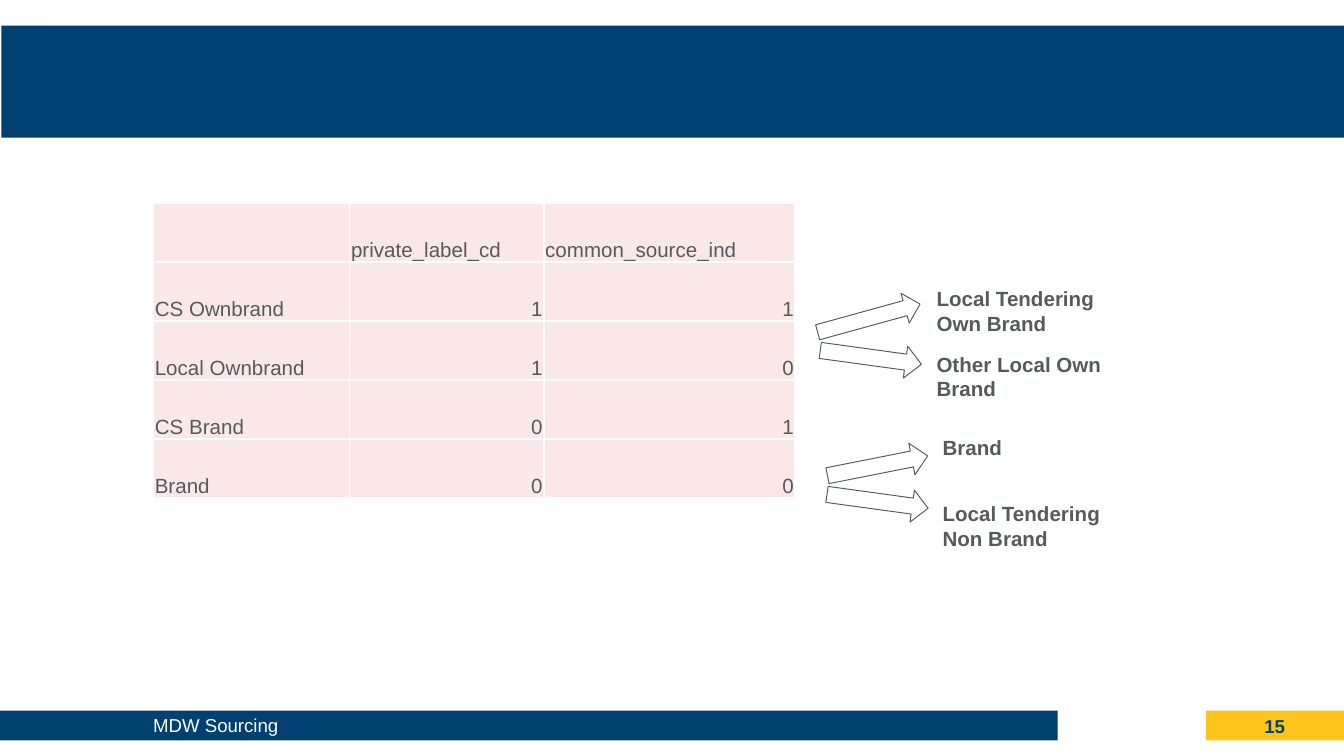
from pptx import Presentation
from pptx.dml.color import RGBColor as RGB
from pptx.enum.shapes import MSO_SHAPE as Shape
from pptx.enum.text import MSO_ANCHOR as Anchor, MSO_AUTO_SIZE as Fit, PP_ALIGN as Align
from pptx.oxml import parse_xml
from pptx.oxml.ns import nsdecls
from pptx.util import Inches, Pt

theme = dict(
    font="Arial", navy="004171", gold="FCC51D", white="FFFFFF",
    grey="565A5B", pink="FAE7E8", small=10, body=11,
)

deck = Presentation()
deck.slide_width = Inches(10)
deck.slide_height = deck.slide_width * 9 // 16
slide = deck.slides.add_slide(deck.slide_layouts[6])
shapes = slide.shapes


def place(left, top, width, height):
    """Turn percent shares of the slide into a box."""
    wide, high = deck.slide_width / 100, deck.slide_height / 100
    return [round(n) for n in (left * wide, top * high, width * wide, height * high)]


def write(frame, text, size, color, bold=False, align=Align.LEFT):
    para = frame.paragraphs[0]
    para.alignment = align
    run = para.add_run()
    run.text = text
    run.font.name, run.font.size = theme["font"], Pt(theme[size])
    run.font.bold = bold
    run.font.color.rgb = RGB.from_string(theme[color])


# Title band and footer bars
for box, color in [
    ((0.1, 3.4, 100, 14.8), "navy"),
    ((0, 94, 78.7, 3.95), "navy"),
    ((89.75, 94, 10.3, 3.95), "gold"),
]:
    bar = shapes.add_shape(Shape.RECTANGLE, *place(*box))
    bar.shadow.inherit = False
    bar.fill.solid()
    bar.fill.fore_color.rgb = RGB.from_string(theme[color])
    bar.line.fill.background()

# Footer text and page number
for box, text, color, page in [
    ((11.4, 94.4, 19.9, 3.02), "MDW Sourcing", "white", False),
    ((94, 94.5, 1.7, 3.02), "15", "navy", True),
]:
    frame = shapes.add_textbox(*place(*box)).text_frame
    frame.margin_left = frame.margin_right = frame.margin_top = frame.margin_bottom = 0
    frame.word_wrap = not page
    frame.auto_size = Fit.SHAPE_TO_FIT_TEXT
    frame.vertical_anchor = Anchor.MIDDLE if page else Anchor.TOP
    write(frame, text, "small", color, page, Align.CENTER if page else Align.LEFT)

# Sourcing flags
rows = [
    ("", "private_label_cd", "common_source_ind"),
    ("CS Ownbrand", "1", "1"),
    ("Local Ownbrand", "1", "0"),
    ("CS Brand", "0", "1"),
    ("Brand", "0", "0"),
]
table = shapes.add_table(5, 3, *place(11.42, 26.9, 47.75, 39)).table
table.first_row = table.horz_banding = False
for col, share in zip(table.columns, (14.6, 14.45, 18.7)):
    col.width = place(0, 0, share, 0)[2]
for r, row in enumerate(rows):
    for c, text in enumerate(row):
        cell = table.cell(r, c)
        cell.margin_left = cell.margin_right = cell.margin_top = Inches(0.01)
        cell.margin_bottom = 0
        cell.vertical_anchor = Anchor.BOTTOM
        for side in ("lnL", "lnR", "lnT", "lnB"):
            cell._tc.get_or_add_tcPr().append(parse_xml(
                f'<a:{side} {nsdecls("a")} w="{Pt(1)}"><a:solidFill>'
                f'<a:srgbClr val="{theme["white"]}"/></a:solidFill></a:{side}>'))
        cell.fill.solid()
        cell.fill.fore_color.rgb = RGB.from_string(theme["pink"])
        if text:
            align = Align.RIGHT if r and c else Align.LEFT
            write(cell.text_frame, text, "body", "grey", align=align)

# Arrows that split the local rows
for box, turn in [
    ((60.7, 40.05, 7.9, 4.1), -15.4),
    ((61, 45.15, 7.6, 4.25), 7.8),
    ((61.5, 64.2, 7.6, 4.25), 7.8),
    ((61.5, 59.5, 7.6, 4.25), -11.2),
]:
    arrow = shapes.add_shape(Shape.RIGHT_ARROW, *place(*box))
    arrow.rotation = turn
    arrow.shadow.inherit = False
    arrow.fill.solid()
    arrow.fill.fore_color.rgb = RGB.from_string(theme["white"])
    arrow.line.color.rgb = RGB.from_string(theme["grey"])
    arrow.line.width = Pt(0.5)

# Labels at the arrow tips
for box, text in [
    ((68.7, 37, 15.5, 8.35), "Local Tendering Own Brand"),
    ((68.7, 45.65, 16.4, 8.35), "Other Local Own Brand"),
    ((69.15, 56.7, 15.5, 5.15), "Brand"),
    ((69.15, 65.4, 16.4, 8.35), "Local Tendering Non Brand"),
]:
    frame = shapes.add_textbox(*place(*box)).text_frame
    frame.word_wrap = True
    frame.auto_size = Fit.SHAPE_TO_FIT_TEXT
    write(frame, text, "body", "grey", True)

deck.save("out.pptx")
